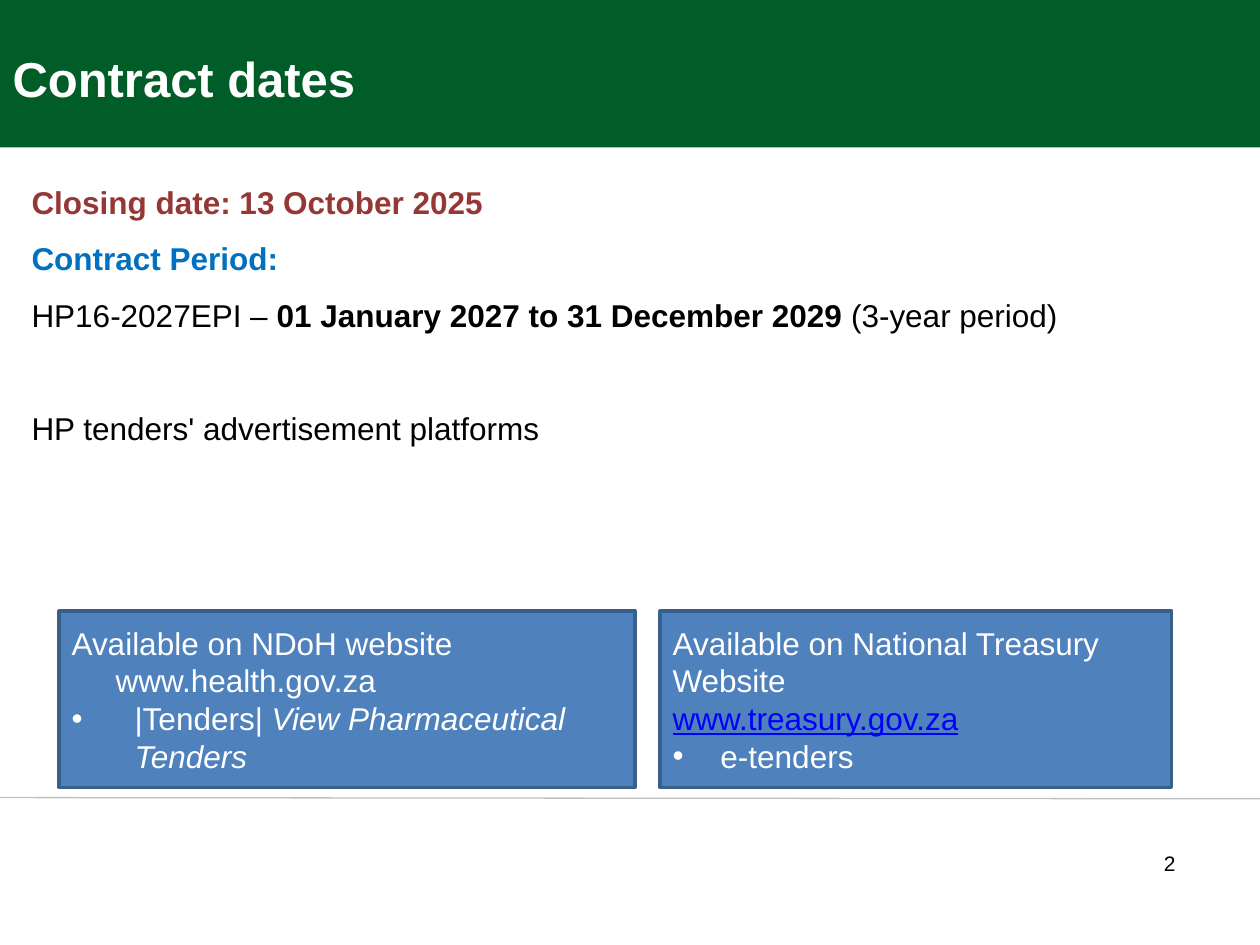
from lxml import etree
from pptx import Presentation
from pptx import util as u
from pptx.dml.color import RGBColor
from pptx.enum import shapes, text
from pptx.oxml.ns import qn

WHITE, BLACK = "FFFFFF", "000000"


def rgb(value):
    return RGBColor.from_string(value)


def place(sp, left, top, width, height):
    box = dict(left=left, top=top, width=width, height=height)
    for name, value in box.items():
        setattr(sp, name, u.Inches(value))


def set_frame(tf, anchor):
    values = dict(word_wrap=True, auto_size=text.MSO_AUTO_SIZE.NONE,
                  vertical_anchor=anchor)
    for name, value in values.items():
        setattr(tf, name, value)


def set_indent(p, left=0, bullet=False):
    pPr = p._p.get_or_add_pPr()
    pPr.set("marL", str(u.Inches(left)))
    pPr.set("indent", str(-u.Inches(left) if bullet else 0))
    if bullet:
        etree.SubElement(pPr, qn("a:buFont")).set("typeface", "Arial")
        etree.SubElement(pPr, qn("a:buChar")).set("char", "•")
    else:
        etree.SubElement(pPr, qn("a:buNone"))


def add_run(p, words, color, size=18, **styles):
    r = p.add_run()
    r.text = words
    values = dict(name="Arial", size=u.Pt(size), **styles)
    for name, value in values.items():
        setattr(r.font, name, value)
    r.font.color.rgb = rgb(color)


def fill_paragraphs(tf, paragraphs, **formats):
    """Each paragraph is (runs, indent values, paragraph formats)."""
    for i, (runs, indent, own) in enumerate(paragraphs):
        p = tf.add_paragraph() if i else tf.paragraphs[0]
        set_indent(p, **indent)
        for name, value in {**formats, **own}.items():
            setattr(p, name, value)
        for words, color, styles in runs:
            add_run(p, words, color, **styles)


def add_rect(s, box, fill, line=None):
    sp = s.shapes.add_shape(shapes.MSO_SHAPE.RECTANGLE, 0, 0, 0, 0)
    place(sp, *box)
    sp.shadow.inherit = False
    sp.fill.solid()
    sp.fill.fore_color.rgb = rgb(fill)
    if line:
        sp.line.color.rgb = rgb(line)
        sp.line.width = u.Pt(2)
    else:
        sp.line.fill.background()
    return sp


def add_rule(s, x1, y1, x2, y2):
    ends = [u.Inches(v) for v in (x1, y1, x2, y2)]
    line = s.shapes.add_connector(shapes.MSO_CONNECTOR.STRAIGHT, *ends)
    line.line.color.rgb = rgb("BFBFBF")
    line.line.width = u.Pt(0.75)
    etree.SubElement(line._element.spPr, qn("a:effectLst"))


def add_platform(s, left, width, paragraphs):
    sp = add_rect(s, (left, 4.85, width, 1.4), "4F81BD", "3A5F8C")
    set_frame(sp.text_frame, text.MSO_ANCHOR.MIDDLE)
    fill_paragraphs(sp.text_frame, paragraphs, alignment=text.PP_ALIGN.LEFT)


def add_title(s, words):
    sp = s.shapes.title
    place(sp, 0, -0.18, 6.08, 1.08)
    set_frame(sp.text_frame, text.MSO_ANCHOR.BOTTOM)
    p = sp.text_frame.paragraphs[0]
    p.alignment = text.PP_ALIGN.LEFT
    add_run(p, words, WHITE, 28, bold=True)


def add_body(s, paragraphs):
    sp = s.placeholders[1]
    place(sp, 0.15, 1.25, 9.79, 2.78)
    set_frame(sp.text_frame, text.MSO_ANCHOR.TOP)
    fill_paragraphs(sp.text_frame, paragraphs, line_spacing=1.5,
                    space_before=u.Pt(0))


def add_page_number(s, number):
    sp = s.shapes.add_textbox(0, 0, 0, 0)
    place(sp, 1, 6.25, 8.57, 1.25)
    tf = sp.text_frame
    set_frame(tf, text.MSO_ANCHOR.MIDDLE)
    tf.margin_right, tf.margin_bottom = u.Inches(0.24), u.Inches(0.1)
    p = tf.paragraphs[0]
    p.alignment = text.PP_ALIGN.RIGHT
    add_run(p, number, BLACK, 12)


def main():
    prs = Presentation()
    prs.slide_width, prs.slide_height = u.Inches(10), u.Inches(7.5)
    s = prs.slides.add_slide(prs.slide_layouts[1])

    band = add_rect(s, (0, 0, 10, 1.17), "005D28")
    s.shapes._spTree.insert(2, band._element)
    add_rule(s, 0, 6.33, 10, 6.34)
    add_title(s, "Contract dates")

    bold = dict(bold=True)
    add_body(s, [
        ([("Closing date: 13 October 2025", "953735", bold)], {}, {}),
        ([("Contract Period:", "0070C0", bold)], {}, {}),
        ([("HP16-2027EPI – ", BLACK, {}),
          ("01 January 2027 to 31 December 2029 ", BLACK, bold),
          ("(3-year period)", BLACK, {})], {}, {}),
        ([("HP tenders' advertisement platforms", BLACK, {})], {},
         dict(space_before=u.Pt(32))),
    ])

    add_platform(s, 0.47, 4.57, [
        ([("Available on NDoH website", WHITE, {})], {}, {}),
        ([("www.health.gov.za", WHITE, {})], dict(left=0.35), {}),
        ([("|Tenders| ", WHITE, {}),
          ("View Pharmaceutical Tenders", WHITE, dict(italic=True))],
         dict(left=0.5, bullet=True), {}),
    ])
    add_platform(s, 5.24, 4.06, [
        ([("Available on National Treasury Website", WHITE, {})], {}, {}),
        ([("www.treasury.gov.za", "0000FF", dict(underline=True))], {}, {}),
        ([("e-tenders", WHITE, {})], dict(left=0.38, bullet=True), {}),
    ])
    add_page_number(s, "2")
    prs.save("out.pptx")


if __name__ == "__main__":
    main()
